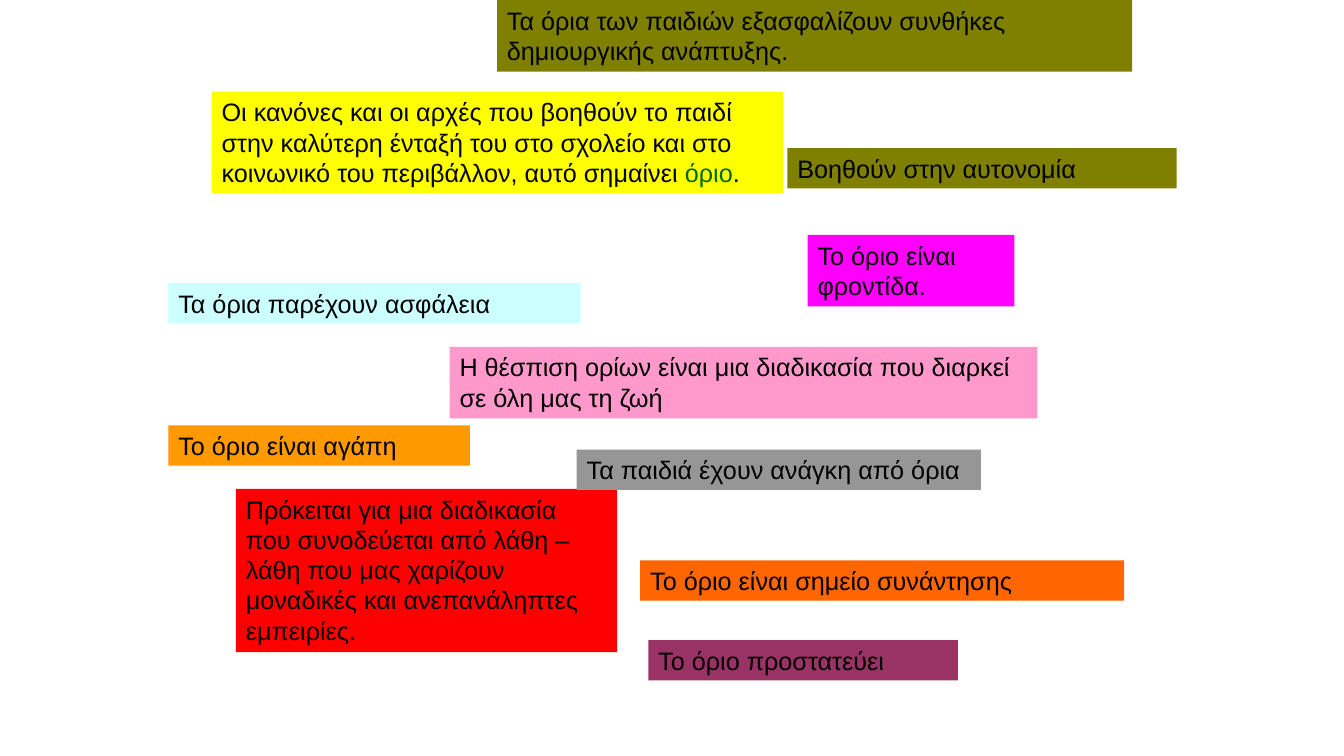
from pptx import Presentation
from pptx.dml.color import RGBColor
from pptx.enum.text import MSO_ANCHOR, MSO_AUTO_SIZE, PP_ALIGN
from pptx.util import Inches, Pt

TOP = MSO_ANCHOR.TOP
LEFT = PP_ALIGN.LEFT
GROW = MSO_AUTO_SIZE.SHAPE_TO_FIT_TEXT

BLACK = "000000"
GREEN = "006600"
OLIVE = "808000"
UNWRAPPED_FILL = "969696"
FONT = {"name": "Arial", "size": Pt(18)}
FRAME = {"vertical_anchor": TOP, "auto_size": GROW}

# left, top, width, height, fill, runs of (text, colour)
NOTES = [
    (2.1, 0.91, 5.67, 1.01, "FFFF00", [
        ("Οι κανόνες και οι αρχές που βοηθούν το παιδί στην καλύτερη ένταξή του "
         "στο σχολείο και στο κοινωνικό του περιβάλλον, αυτό σημαίνει ", BLACK),
        ("όριο", GREEN),
        (".", BLACK)]),
    (4.46, 3.44, 5.83, 0.71, "FF99CC", [
        ("Η θέσπιση ορίων είναι μια διαδικασία που διαρκεί σε όλη μας τη ζωή", BLACK)]),
    (2.34, 4.85, 3.78, 1.62, "FF0000", [
        ("Πρόκειται για μια διαδικασία που συνοδεύεται από λάθη – λάθη που μας "
         "χαρίζουν μοναδικές και ανεπανάληπτες εμπειρίες.", BLACK)]),
    (5.72, 4.46, 4.01, 0.4, UNWRAPPED_FILL, [("Τα παιδιά έχουν ανάγκη από όρια", BLACK)]),
    (1.67, 4.22, 2.99, 0.4, "FF9900", [("Το όριο είναι αγάπη", BLACK)]),
    (8.01, 2.33, 2.05, 0.71, "FF00FF", [("Το όριο είναι φροντίδα.", BLACK)]),
    (6.35, 5.56, 4.8, 0.4, "FF6600", [("Το όριο είναι σημείο συνάντησης", BLACK)]),
    (6.43, 6.35, 3.07, 0.4, "993366", [("Το όριο προστατεύει", BLACK)]),
    (1.67, 2.81, 4.09, 0.4, "CCFFFF", [("Τα όρια παρέχουν ασφάλεια", BLACK)]),
    (4.93, 0, 6.3, 0.71, OLIVE, [
        ("Τα όρια των παιδιών εξασφαλίζουν συνθήκες δημιουργικής ανάπτυξης.", BLACK)]),
    (7.81, 1.47, 3.86, 0.4, OLIVE, [("Βοηθούν στην αυτονομία", BLACK)]),
]


def set_color(color_format, hex_color):
    color_format.rgb = RGBColor.from_string(hex_color)


presentation = Presentation()
presentation.slide_width = Inches(13.33)
presentation.slide_height = Inches(7.5)
slide = presentation.slides.add_slide(presentation.slide_layouts[6])

for left, top, width, height, fill, runs in NOTES:
    note = slide.shapes.add_textbox(Inches(left), Inches(top), Inches(width), Inches(height))
    note.fill.solid()
    set_color(note.fill.fore_color, fill)
    frame = note.text_frame
    for name, value in FRAME.items():
        setattr(frame, name, value)
    frame.word_wrap = fill != UNWRAPPED_FILL
    paragraph = frame.paragraphs[0]
    paragraph.alignment = LEFT
    for text, color in runs:
        run = paragraph.add_run()
        run.text = text
        for name, value in FONT.items():
            setattr(run.font, name, value)
        set_color(run.font.color, color)

presentation.save("out.pptx")
